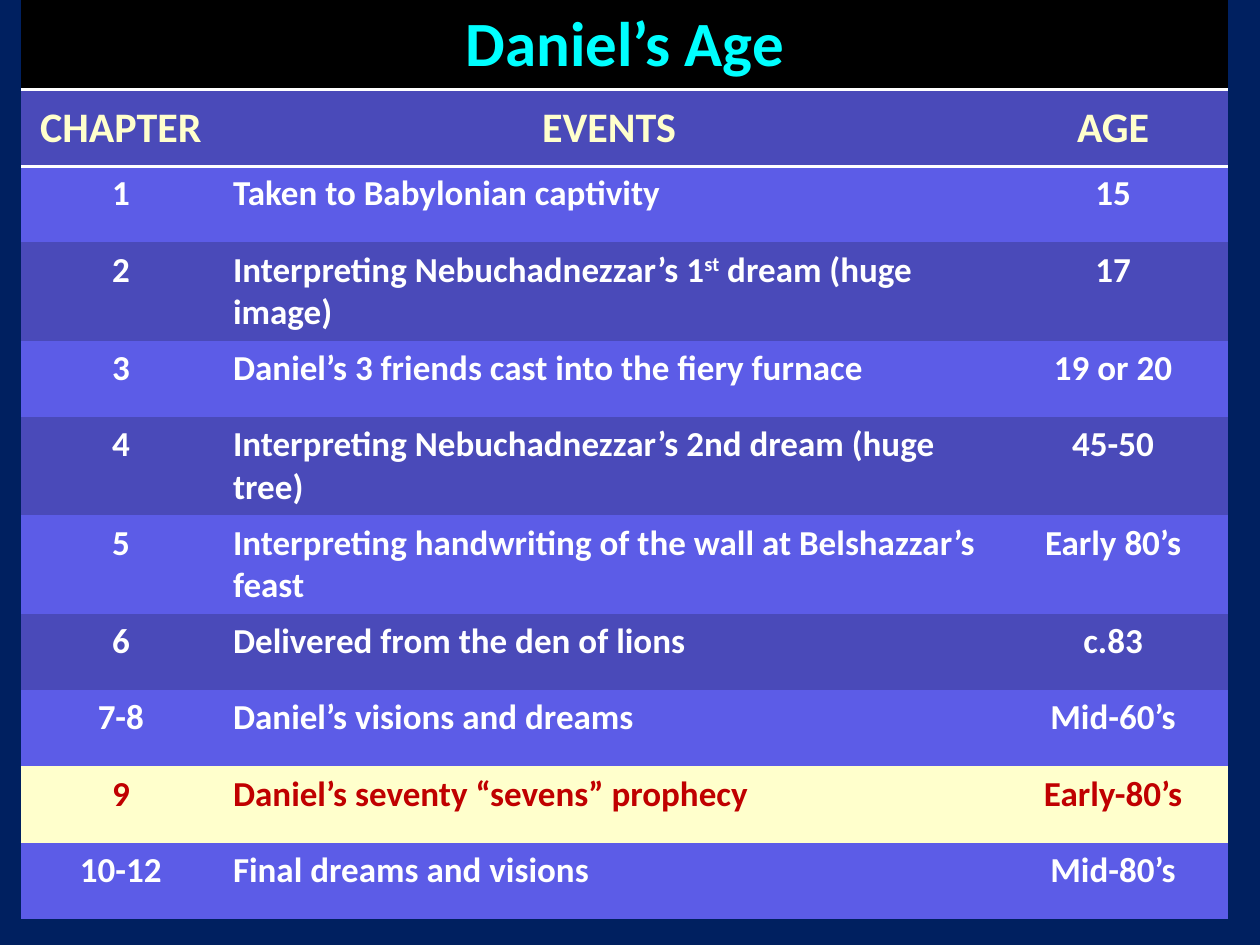
from dataclasses import dataclass

from lxml import etree
from pptx import Presentation
from pptx.dml.color import RGBColor
from pptx.enum.text import MSO_ANCHOR, PP_ALIGN
from pptx.oxml.ns import qn
from pptx.table import _Cell
from pptx.util import Pt

LEFT, CENTER = PP_ALIGN.LEFT, PP_ALIGN.CENTER
TOP, MIDDLE = MSO_ANCHOR.TOP, MSO_ANCHOR.MIDDLE
FONT = "Calibri"
PLAIN = "{2D5ABB26-0587-4C30-8999-92F81FD0307C}"
NAVY, BLACK, WHITE, CYAN = "002060", "000000", "FFFFFF", "00FFFF"
DARK, LIGHT, CREAM, RED = "4A4AB9", "5C5CE7", "FFFFCC", "C00000"
WIDTHS = [113.8, 444.2, 131.8]
SHORT, TALL = 43.6, 54


@dataclass
class Look:
    fill: str
    ink: str
    size: float
    anchor: MSO_ANCHOR = TOP


@dataclass
class Event:
    chapter: str
    title: str
    age: str
    height: float = SHORT
    marked: bool = False


EVENTS = [
    Event("1", "Taken to Babylonian captivity", "15"),
    Event("2", "Interpreting Nebuchadnezzar’s 1^st^ dream (huge image)", "17", TALL),
    Event("3", "Daniel’s 3 friends cast into the fiery furnace", "19 or 20"),
    Event("4", "Interpreting Nebuchadnezzar’s 2nd dream (huge tree)", "45-50", TALL),
    Event("5", "Interpreting handwriting of the wall at Belshazzar’s feast",
          "Early 80’s", TALL),
    Event("6", "Delivered from the den of lions", "c.83"),
    Event("7-8", "Daniel’s visions and dreams", "Mid-60’s"),
    Event("9", "Daniel’s seventy “sevens” prophecy", "Early-80’s", marked=True),
    Event("10-12", "Final dreams and visions", "Mid-80’s"),
]


def color(code: str) -> RGBColor:
    return RGBColor.from_string(code)


def write(cell: _Cell, text: str, look: Look, align: PP_ALIGN = CENTER) -> None:
    cell.fill.solid()
    cell.fill.fore_color.rgb = color(look.fill)
    cell.vertical_anchor = look.anchor
    para = cell.text_frame.paragraphs[0]
    para.alignment = align
    for i, part in enumerate(text.split("^")):
        run = para.add_run()
        run.text = part
        font = run.font
        font.name, font.size, font.bold = FONT, Pt(look.size), True
        font.color.rgb = color(look.ink)
        if i % 2:
            run._r.get_or_add_rPr().set("baseline", "30000")


def rule(cell: _Cell, side: str) -> None:
    line = etree.Element(qn(f"a:{side}"), w=str(Pt(2)))
    fill = etree.SubElement(line, qn("a:solidFill"))
    etree.SubElement(fill, qn("a:srgbClr"), val=WHITE)
    cell._tc.get_or_add_tcPr().insert(0, line)


def main() -> None:
    deck = Presentation()
    deck.slide_width, deck.slide_height = Pt(720), Pt(540)
    slide = deck.slides.add_slide(deck.slide_layouts[6])
    back = slide.background.fill
    back.solid()
    back.fore_color.rgb = color(NAVY)

    heights = [49, SHORT] + [event.height for event in EVENTS]
    frame = slide.shapes.add_table(len(heights), len(WIDTHS), Pt(12.2), Pt(0),
                                   Pt(sum(WIDTHS)), Pt(sum(heights)))
    table = frame.table
    table.first_row = table.horz_banding = False
    table._tbl.tblPr.find(qn("a:tableStyleId")).text = PLAIN
    for col, width in zip(table.columns, WIDTHS):
        col.width = Pt(width)
    for row, height in zip(table.rows, heights):
        row.height = Pt(height)

    table.cell(0, 0).merge(table.cell(0, 2))
    write(table.cell(0, 0), "Daniel’s Age", Look(BLACK, CYAN, 36))
    head = Look(DARK, CREAM, 24, MIDDLE)
    for c, name in enumerate(["CHAPTER", "EVENTS", "AGE"]):
        write(table.cell(1, c), name, head)
        rule(table.cell(0, c), "lnB")
        rule(table.cell(1, c), "lnT")

    for r, event in enumerate(EVENTS, 2):
        look = Look(DARK if r % 2 else LIGHT, WHITE, 20)
        if event.marked:
            look = Look(CREAM, RED, 20)
        write(table.cell(r, 0), event.chapter, look)
        write(table.cell(r, 1), event.title, look, LEFT)
        write(table.cell(r, 2), event.age, look)

    deck.save("out.pptx")


if __name__ == "__main__":
    main()
